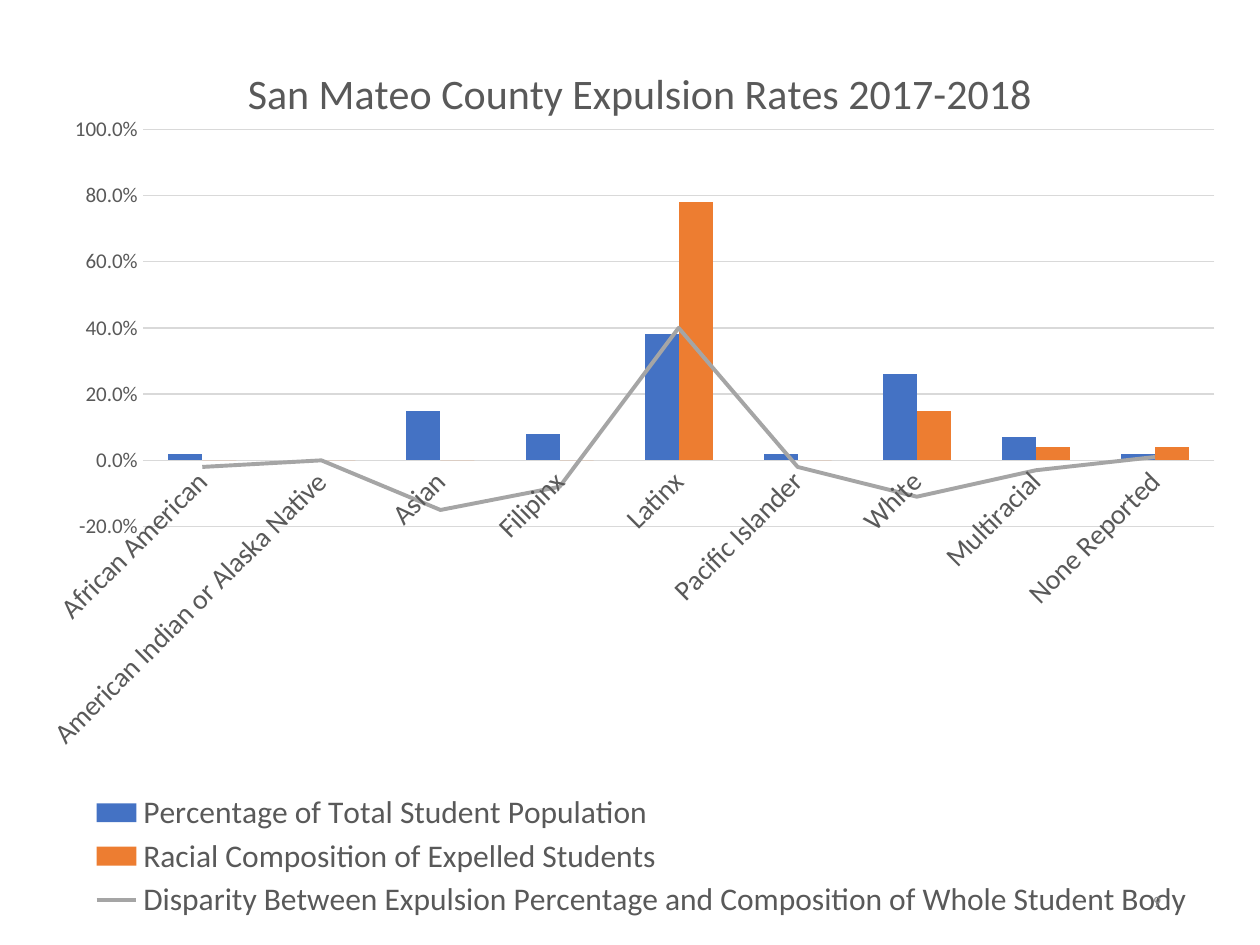
from dataclasses import dataclass
from typing import Any

from lxml import etree
from pptx import Presentation
from pptx.chart.data import CategoryChartData
from pptx.dml.color import RGBColor
from pptx.enum.chart import XL_CHART_TYPE, XL_LEGEND_POSITION, XL_MARKER_STYLE, XL_TICK_MARK
from pptx.enum.text import MSO_ANCHOR, PP_ALIGN
from pptx.oxml import parse_xml
from pptx.oxml.ns import nsdecls, qn
from pptx.util import Pt

COLUMNS = XL_CHART_TYPE.COLUMN_CLUSTERED
LEGEND_BOTTOM = XL_LEGEND_POSITION.BOTTOM
NO_MARKER = XL_MARKER_STYLE.NONE
NO_TICK = XL_TICK_MARK.NONE
MIDDLE = MSO_ANCHOR.MIDDLE
RIGHT = PP_ALIGN.RIGHT

BLUE = RGBColor(0x44, 0x72, 0xC4)
ORANGE = RGBColor(0xED, 0x7D, 0x31)
GRAY = RGBColor(0xA5, 0xA5, 0xA5)
TEXT = RGBColor(0x59, 0x59, 0x59)
GRID = RGBColor(0xD9, 0xD9, 0xD9)
PAGE_NUMBER = RGBColor(0x8C, 0x8C, 0x8C)

FONT_NAME = "Calibri"
PERCENT = "0.0%"
TITLE = "San Mateo County Expulsion Rates 2017-2018"
GROUPS = (
    "African American", "American Indian or Alaska Native", "Asian", "Filipinx",
    "Latinx", "Pacific Islander", "White", "Multiracial", "None Reported",
)


@dataclass(frozen=True)
class Measure:
    name: str
    values: tuple[float, ...]
    color: RGBColor


@dataclass(frozen=True)
class Region:
    x: float
    y: float
    w: float | None = None
    h: float | None = None


POPULATION = Measure(
    "Percentage of Total Student Population",
    (0.02, 0, 0.15, 0.08, 0.38, 0.02, 0.26, 0.07, 0.02), BLUE,
)
EXPELLED = Measure(
    "Racial Composition of Expelled Students",
    (0, 0, 0, 0, 0.78, 0, 0.15, 0.04, 0.04), ORANGE,
)
DISPARITY = Measure(
    "Disparity Between Expulsion Percentage and Composition of Whole Student Body",
    (-0.02, 0, -0.15, -0.08, 0.4, -0.02, -0.11, -0.03, 0.01), GRAY,
)
MEASURES = (POPULATION, EXPELLED, DISPARITY)

PLOT_REGION = Region(0.1, 0.12, 0.88, 0.44)
TITLE_REGION = Region(0.18, 0.04)
LEGEND_REGION = Region(0.05, 0.85, 0.92, 0.15)


def set_values(target: Any, values: dict[str, Any]) -> None:
    for name, value in values.items():
        setattr(target, name, value)


def style_font(font: Any, size: float, color: RGBColor) -> None:
    set_values(font, {"name": FONT_NAME, "size": Pt(size), "bold": False})
    font.color.rgb = color


def style_line(line: Any, color: RGBColor, width: float) -> None:
    line.color.rgb = color
    line.width = Pt(width)


def remove_children(element: Any, tag: str) -> None:
    for child in element.findall(qn(tag)):
        element.remove(child)


def place(element: Any, region: Region, index: int) -> None:
    remove_children(element, "c:layout")
    layout = parse_xml(f"<c:layout {nsdecls('c')}><c:manualLayout/></c:layout>")
    manual = layout[0]
    settings: dict[str, Any] = {"xMode": "edge", "yMode": "edge"}
    if element.tag == qn("c:plotArea"):
        settings = {"layoutTarget": "inner", **settings}
    settings |= {name: getattr(region, name) for name in "xywh"}
    for name, value in settings.items():
        if value is not None:
            etree.SubElement(manual, qn(f"c:{name}")).set("val", str(value))
    element.insert(index, layout)


def move_last_series_to_line(chart: Any) -> None:
    columns = chart.plots[0]._element
    series = columns.findall(qn("c:ser"))[-1]
    remove_children(series, "c:invertIfNegative")
    line_chart = parse_xml(
        f"<c:lineChart {nsdecls('c')}><c:grouping val='standard'/>"
        "<c:varyColors val='0'/></c:lineChart>"
    )
    line_chart.append(series)
    etree.SubElement(line_chart, qn("c:marker")).set("val", "1")
    for axis in columns.findall(qn("c:axId")):
        etree.SubElement(line_chart, qn("c:axId")).set("val", axis.get("val"))
    columns.addnext(line_chart)


def style_axes(chart: Any) -> None:
    ticks = {"major_tick_mark": NO_TICK, "minor_tick_mark": NO_TICK}
    groups, rates = chart.category_axis, chart.value_axis
    set_values(groups, ticks)
    style_font(groups.tick_labels.font, 16, TEXT)
    style_line(groups.format.line, GRID, 0.75)
    groups._element.find(qn("c:txPr")).find(qn("a:bodyPr")).set("rot", "-2700000")

    set_values(rates, ticks | {
        "minimum_scale": -0.2, "maximum_scale": 1, "major_unit": 0.2,
        "has_major_gridlines": True,
    })
    set_values(rates.tick_labels, {"number_format": PERCENT, "number_format_is_linked": False})
    style_font(rates.tick_labels.font, 12, TEXT)
    rates.format.line.fill.background()
    style_line(rates.major_gridlines.format.line, GRID, 0.75)


def add_rates_chart(page: Any) -> None:
    data = CategoryChartData(number_format=PERCENT)
    data.categories = GROUPS
    for measure in MEASURES:
        data.add_series(measure.name, measure.values)
    chart = page.shapes.add_chart(COLUMNS, Pt(12), Pt(12), Pt(696), Pt(516), data).chart
    style_font(chart.font, 10, TEXT)
    move_last_series_to_line(chart)

    columns, lines = chart.plots
    set_values(columns, {"gap_width": 150, "overlap": 0, "vary_by_categories": False})
    for series, measure in zip(columns.series, MEASURES):
        series.format.fill.solid()
        series.format.fill.fore_color.rgb = measure.color
    disparity = lines.series[0]
    disparity.smooth = False
    disparity.marker.style = NO_MARKER
    style_line(disparity.format.line, DISPARITY.color, 2.25)
    style_axes(chart)

    chart.has_title = True
    para = chart.chart_title.text_frame.paragraphs[0]
    span = para.add_run()
    span.text = TITLE
    style_font(span.font, 24, TEXT)

    chart.has_legend = True
    set_values(chart.legend, {"position": LEGEND_BOTTOM, "include_in_layout": False})
    style_font(chart.legend.font, 18, TEXT)

    place(chart.plots[0]._element.getparent(), PLOT_REGION, 0)
    place(chart.chart_title._element, TITLE_REGION, 1)
    place(chart.legend._element, LEGEND_REGION, 1)


def add_page_number(page: Any, number: str) -> None:
    box = page.shapes.add_textbox(Pt(508.5), Pt(500.5), Pt(162), Pt(28.75))
    set_values(box.text_frame, {"word_wrap": True, "vertical_anchor": MIDDLE})
    para = box.text_frame.paragraphs[0]
    para.alignment = RIGHT
    span = para.add_run()
    span.text = number
    style_font(span.font, 9, PAGE_NUMBER)


def main() -> None:
    deck = Presentation()
    set_values(deck, {"slide_width": Pt(720), "slide_height": Pt(540)})
    page = deck.slides.add_slide(deck.slide_layouts[6])
    add_rates_chart(page)
    add_page_number(page, "9")
    deck.save("out.pptx")


if __name__ == "__main__":
    main()
